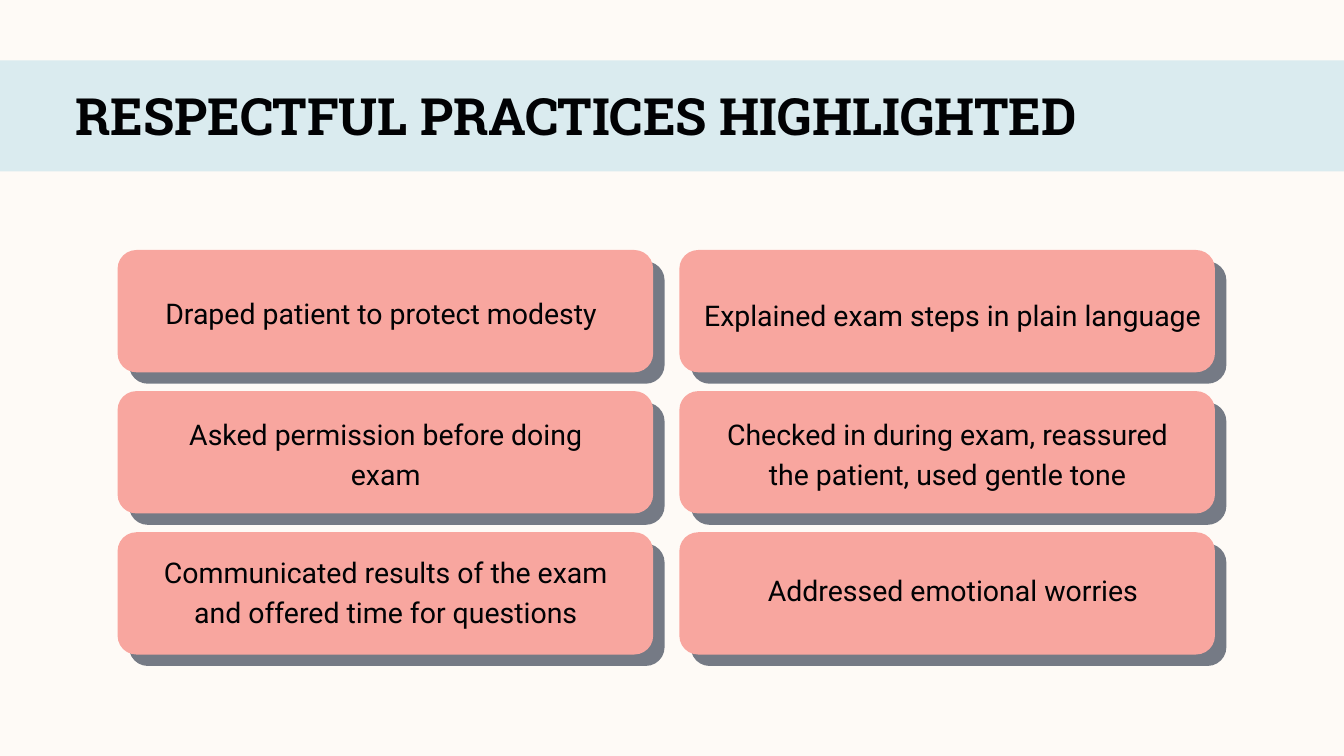
from dataclasses import dataclass

from lxml import etree
from pptx import Presentation
from pptx.dml.color import RGBColor
from pptx.enum.shapes import MSO_SHAPE
from pptx.enum.text import MSO_ANCHOR, PP_ALIGN
from pptx.oxml.ns import qn
from pptx.shapes.autoshape import Shape
from pptx.slide import Slide
from pptx.text.text import TextFrame
from pptx.util import Inches, Pt

CREAM = RGBColor(0xFE, 0xFA, 0xF6)
PALE_BLUE = RGBColor(0xDA, 0xEB, 0xEF)
SLATE = RGBColor(0x5E, 0x64, 0x72)
SALMON = RGBColor(0xF8, 0xA6, 0x9F)
INK = RGBColor(0x01, 0x02, 0x04)

RECTANGLE = MSO_SHAPE.RECTANGLE
ROUNDED = MSO_SHAPE.ROUNDED_RECTANGLE
LEFT, CENTER = PP_ALIGN.LEFT, PP_ALIGN.CENTER
TOP = MSO_ANCHOR.TOP

# Lengths in inches
SLIDE_WIDTH, SLIDE_HEIGHT = 20, 11.25
BLEED = 0.09
GRID_LEFT, GRID_TOP = 1.75, 3.72
COLUMN_STEP, ROW_STEP = 8.36, 2.1
CARD_WIDTH, CARD_HEIGHT = 7.97, 1.82
CORNER_RADIUS = 0.28
SHADOW_OFFSET = 0.17
SHADOW_OPACITY = 85
LINE_HEIGHT = 0.57
TITLE_LAYOUT = 5


@dataclass(frozen=True)
class Card:
    column: int
    row: int
    text: str
    # Label position inside the card
    label_left: float = 0.66
    label_top: float = 0.3
    label_width: float = 6.66
    lines: int = 2


CARDS = [
    Card(0, 0, "Draped patient to protect modesty", 0.47, 0.6, 6.9, 1),
    Card(1, 0, "Explained exam steps in plain language", 0.31, 0.63, 7.51, 1),
    Card(0, 1, "Asked permission before doing exam"),
    Card(1, 1, "Checked in during exam, reassured the patient, used gentle tone"),
    Card(0, 2, "Communicated results of the exam and offered time for questions",
         label_top=0.25),
    Card(1, 2, "Addressed emotional worries", 0.74, 0.53, lines=1),
]


def add_block(slide: Slide, kind: MSO_SHAPE, left: float, top: float,
              width: float, height: float, color: RGBColor) -> Shape:
    shape = slide.shapes.add_shape(
        kind, Inches(left), Inches(top), Inches(width), Inches(height))
    shape.shadow.inherit = False
    shape.fill.solid()
    shape.fill.fore_color.rgb = color
    shape.line.fill.background()
    if kind == ROUNDED:
        shape.adjustments[0] = CORNER_RADIUS / height
    return shape


def set_opacity(shape: Shape, percent: int) -> None:
    color = shape.element.spPr.find(qn("a:solidFill")).find(qn("a:srgbClr"))
    etree.SubElement(color, qn("a:alpha")).set("val", str(percent * 1000))


def write_text(frame: TextFrame, text: str, font: str, size: float,
               spacing: float, alignment: PP_ALIGN, bold: bool = False) -> None:
    frame.word_wrap = True
    frame.vertical_anchor = TOP
    frame.margin_left = frame.margin_right = 0
    frame.margin_top = frame.margin_bottom = 0
    paragraph = frame.paragraphs[0]
    paragraph.alignment = alignment
    paragraph.line_spacing = Pt(spacing)
    run = paragraph.add_run()
    run.text = text
    run.font.name = font
    run.font.size = Pt(size)
    run.font.bold = bold
    run.font.color.rgb = INK


def add_title(slide: Slide, text: str) -> None:
    title = slide.shapes.title
    title.left, title.top = Inches(1.12), Inches(1.26)
    title.width, title.height = Inches(15.38), Inches(0.93)
    write_text(title.text_frame, text, "Roboto Slab", 55, 66, LEFT, bold=True)
    # The band lies behind the title
    band = add_block(slide, RECTANGLE, -BLEED, 0.9,
                     SLIDE_WIDTH + 2 * BLEED, 1.65, PALE_BLUE)
    title.element.addprevious(band.element)


def add_card(slide: Slide, card: Card) -> None:
    left = GRID_LEFT + card.column * COLUMN_STEP
    top = GRID_TOP + card.row * ROW_STEP
    backing = add_block(slide, ROUNDED, left + SHADOW_OFFSET, top + SHADOW_OFFSET,
                        CARD_WIDTH, CARD_HEIGHT, SLATE)
    set_opacity(backing, SHADOW_OPACITY)
    add_block(slide, ROUNDED, left, top, CARD_WIDTH, CARD_HEIGHT, SALMON)
    label = slide.shapes.add_textbox(
        Inches(left + card.label_left), Inches(top + card.label_top),
        Inches(card.label_width), Inches(card.lines * LINE_HEIGHT))
    write_text(label.text_frame, card.text, "Roboto", 30.5, 42.7, CENTER)


def main() -> None:
    presentation = Presentation()
    presentation.slide_width = Inches(SLIDE_WIDTH)
    presentation.slide_height = Inches(SLIDE_HEIGHT)
    slide = presentation.slides.add_slide(presentation.slide_layouts[TITLE_LAYOUT])
    slide.background.fill.solid()
    slide.background.fill.fore_color.rgb = CREAM

    add_title(slide, "RESPECTFUL PRACTICES HIGHLIGHTED")
    for card in CARDS:
        add_card(slide, card)

    presentation.save("out.pptx")


if __name__ == "__main__":
    main()
